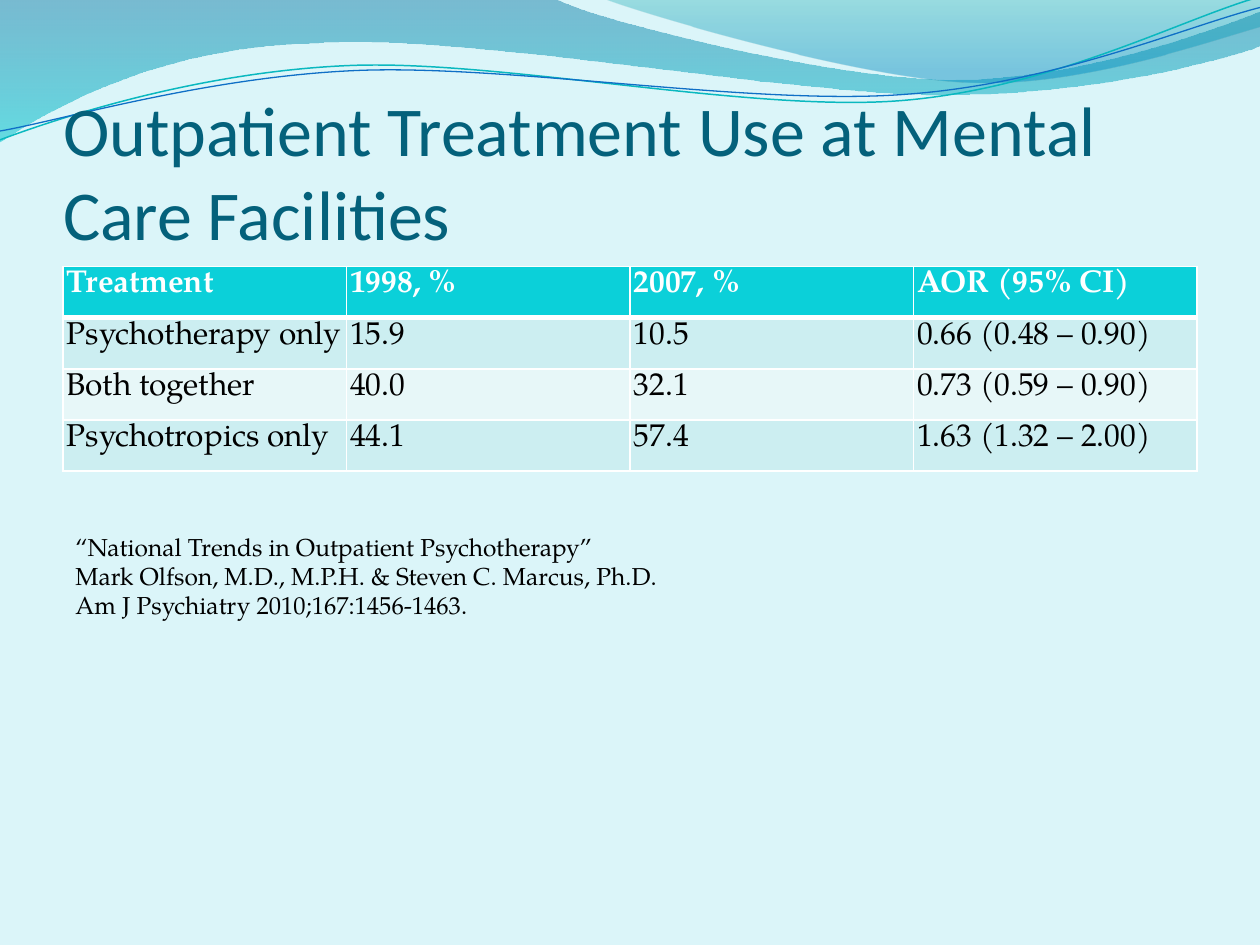
import math

import lxml.etree
import pptx
import pptx.dml.color
import pptx.enum.text
import pptx.oxml
import pptx.oxml.ns
import pptx.util

presentation = pptx.Presentation()
presentation.slide_width = pptx.util.Inches(10)
presentation.slide_height = pptx.util.Inches(7.5)
column = presentation.slide_width / 40
row = presentation.slide_height / 30
slide = presentation.slides.add_slide(presentation.slide_layouts[5])
qn = pptx.oxml.ns.qn
serif = "TeX Gyre Pagella"


def color(value):
    return pptx.dml.color.RGBColor.from_string(value)


def draw_wave(pieces, closed, center=(0, 0), tilt=0):
    sine, cosine = math.sin(math.radians(tilt)), math.cos(math.radians(tilt))
    points = []
    for piece in pieces:
        for x, y in zip(piece[::2], piece[1::2]):
            across, down = x - center[0], y - center[1]
            points.append((
                pptx.util.Inches(center[0] + across * cosine + down * sine),
                pptx.util.Inches(center[1] - across * sine + down * cosine),
            ))
    builder = slide.shapes.build_freeform(*points[0])
    builder.add_line_segments(points[1:], close=closed)
    shape = builder.convert_to_shape()
    shape.shadow.inherit = False
    shape.rotation = tilt % 360
    segments = iter(list(shape.element.iter(qn("a:lnTo"))))
    for piece in pieces[1:]:
        segment = next(segments)
        if len(piece) == 6:
            curve = lxml.etree.Element(qn("a:cubicBezTo"))
            segment.addprevious(curve)
            for part in (segment, next(segments), next(segments)):
                curve.append(part[0])
                part.getparent().remove(part)
    return shape


slide.background.fill.solid()
slide.background.fill.fore_color.rgb = color("DBF5F9")

bands = [
    ([(0, 0), (4.4, -0.01), (4.76, 0.17, 6.64, 0.63, 7.58, 0.63),
      (8.53, 0.63, 9.58, 0.26, 10, 0.09), (10.01, 0.36),
      (9.83, 0.44, 8.7, 0.76, 7.46, 0.75), (6.22, 0.75, 3.82, 0.28, 2.57, 0.34),
      (1.29, 0.36, 0.46, 0.83, -0.01, 1.13), (0, 0)],
     [(0, "0074A1", 45), (1, "00C6CF", 55)]),
    ([(4.79, -0.01), (5.09, 0.11, 6.82, 0.62, 7.69, 0.65),
      (8.56, 0.69, 9.61, 0.32, 10, 0.21), (10, 0), (4.79, -0.01)],
     [(0, "00A1A9", 30), (0.8, "008BBF", 45)]),
]
for pieces, stops in bands:
    band = draw_wave(pieces, True)
    band.line.fill.background()
    band.fill.gradient()
    band.fill.gradient_angle = 270
    for stop, (position, value, opacity) in zip(band.fill.gradient_stops, stops):
        stop.position = position
        stop.color.rgb = color(value)
    for node, (position, value, opacity) in zip(band.element.iter(qn("a:srgbClr")), stops):
        lxml.etree.SubElement(node, qn("a:alpha"), val=str(opacity * 1000))

strands = [
    ([(0, 1.11), (0.48, 0.93, 1.58, 0.57, 2.77, 0.52),
      (3.95, 0.47, 5.93, 0.89, 7.13, 0.8), (8.33, 0.71, 9.38, 0.15, 9.98, -0.02)],
     (4.99, 0.58), "0AB8BF", 0.85),
    ([(0, 1.04), (0.47, 0.96, 1.64, 0.61, 2.83, 0.56),
      (4.03, 0.51, 5.97, 0.84, 7.17, 0.75), (8.36, 0.67, 9.41, 0.21, 10, 0.06)],
     (5, 0.59), "0F6FC6", 0.75),
]
for pieces, center, value, width in strands:
    strand = draw_wave(pieces, False, center, -2.7)
    strand.fill.background()
    strand.line.color.rgb = color(value)
    strand.line.width = pptx.util.Pt(width)

title = slide.shapes.title
slide.shapes.element.append(title.element)
title.left, title.top = int(2 * column), int(3.08 * row)
title.width, title.height = int(36 * column), int(5 * row)
frame = title.text_frame
frame.text = "Outpatient Treatment Use at Mental Care Facilities"
frame.word_wrap = True
frame.auto_size = pptx.enum.text.MSO_AUTO_SIZE.NONE
frame.vertical_anchor = pptx.enum.text.MSO_ANCHOR.BOTTOM
frame.margin_left = frame.margin_right = frame.margin_bottom = 0
frame.margin_top = pptx.util.Inches(0.05)
paragraph = frame.paragraphs[0]
paragraph.alignment = pptx.enum.text.PP_ALIGN.LEFT
paragraph.font.size = pptx.util.Pt(40)
paragraph.font.name = "Calibri"
paragraph.font.color.rgb = color("04617B")

records = [
    ("Treatment", "1998, %", "2007, %", "AOR (95% CI)"),
    ("Psychotherapy only", "15.9", "10.5", "0.66 (0.48 – 0.90)"),
    ("Both together", "40.0", "32.1", "0.73 (0.59 – 0.90)"),
    ("Psychotropics only", "44.1", "57.4", "1.63 (1.32 – 2.00)"),
]
table = slide.shapes.add_table(
    4, 4, int(2 * column), int(8.46 * row), int(36 * column), int(6.5 * row)
).table
for row_index, record in enumerate(records):
    header = row_index == 0
    for column_index, text in enumerate(record):
        cell = table.cell(row_index, column_index)
        cell.text = text
        cell.margin_left = cell.margin_right = pptx.util.Inches(0.03)
        cell.margin_top = cell.margin_bottom = pptx.util.Inches(0.03)
        cell.fill.solid()
        cell.fill.fore_color.rgb = color(
            "0BD0D9" if header else "CCEEF1" if row_index % 2 else "E7F7F8")
        font = cell.text_frame.paragraphs[0].font
        font.size = pptx.util.Pt(18)
        font.name = serif
        font.bold = header
        font.color.rgb = color("FFFFFF" if header else "000000")
        borders = {"lnL": 1, "lnR": 1, "lnT": 3 if row_index == 1 else 1, "lnB": 3 if header else 1}
        for position, (side, width) in enumerate(borders.items()):
            cell._tc.get_or_add_tcPr().insert(position, pptx.oxml.parse_xml(
                f'<a:{side} {pptx.oxml.ns.nsdecls("a")} w="{pptx.util.Pt(width)}">'
                f'<a:solidFill><a:srgbClr val="FFFFFF"/></a:solidFill></a:{side}>'))

citation = slide.shapes.add_textbox(
    int(2 * column), int(16.68 * row), int(35.68 * column), int(3.24 * row)
).text_frame
citation.word_wrap = True
citation.auto_size = pptx.enum.text.MSO_AUTO_SIZE.SHAPE_TO_FIT_TEXT
citation.text = "\n".join([
    "“National Trends in Outpatient Psychotherapy”",
    "Mark Olfson, M.D., M.P.H. & Steven C. Marcus, Ph.D.",
    "Am J Psychiatry 2010;167:1456-1463.",
])
for paragraph in citation.paragraphs:
    paragraph.font.size = pptx.util.Pt(14)
    paragraph.font.name = serif
    paragraph.font.color.rgb = color("000000")

presentation.save("out.pptx")
